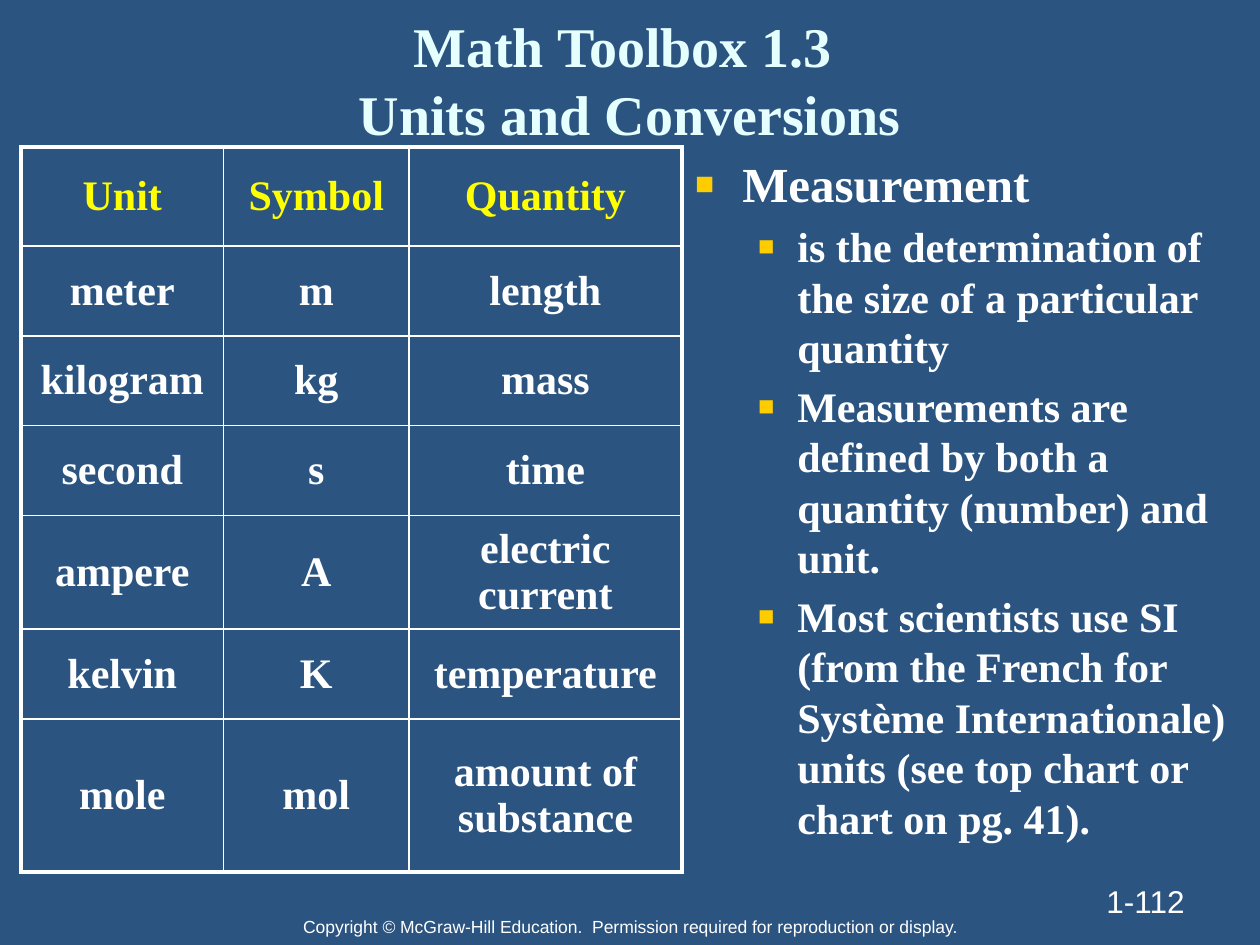
from lxml import etree
from pptx import Presentation
from pptx.dml.color import RGBColor
from pptx.enum import text as txt
from pptx.oxml import ns
from pptx.util import Cm, Pt

NAVY = RGBColor(0x2B, 0x54, 0x81)
WHITE = RGBColor(0xFF, 0xFF, 0xFF)
YELLOW = RGBColor(0xFF, 0xFF, 0x00)
ICE = RGBColor(0xE5, 0xFF, 0xFF)
GOLD = RGBColor(0xFF, 0xCC, 0x00)
SERIF, SANS = "Times New Roman", "Arial"
CENTER, RIGHT = txt.PP_ALIGN.CENTER, txt.PP_ALIGN.RIGHT
MIDDLE, TOP, BOTTOM = (txt.MSO_ANCHOR.MIDDLE, txt.MSO_ANCHOR.TOP,
                       txt.MSO_ANCHOR.BOTTOM)

UNITS = [
    ("Unit", "Symbol", "Quantity"),
    ("meter", "m", "length"),
    ("kilogram", "kg", "mass"),
    ("second", "s", "time"),
    ("ampere", "A", "electric current"),
    ("kelvin", "K", "temperature"),
    ("mole", "mol", "amount of substance"),
]
COLUMN_WIDTHS = (4.09, 3.73, 5.51)
ROW_HEIGHTS = (2, 1.81, 1.81, 1.81, 2.29, 1.81, 3.09)

MEASUREMENT = [
    (0, "Measurement"),
    (1, "is the determination of the size of a particular quantity"),
    (1, "Measurements are defined by both a quantity (number) and unit."),
    (1, "Most scientists use SI (from the French for Système Internationale) "
        "units (see top chart or chart on pg. 41)."),
]
# level: (text size, left margin, first-line indent)
LEVELS = {0: (28, 0.95, -0.95), 1: (24, 2.06, -0.79)}


def apply(target, **values):
    for name, value in values.items():
        setattr(target, name, value)


def place(shape, box):
    left, top, width, height = (Cm(length) for length in box)
    apply(shape, left=left, top=top, width=width, height=height)


def write(paragraph, words, size, color, name=SERIF, bold=True):
    paragraph.text = words
    for run in paragraph.runs:
        apply(run.font, size=Pt(size), name=name, bold=bold)
        run.font.color.rgb = color


def add_child(parent, tag, **attributes):
    return etree.SubElement(parent, ns.qn(tag), attributes)


def add_square_bullet(paragraph, left, indent):
    properties = paragraph._p.get_or_add_pPr()
    properties.set("marL", str(Cm(left)))
    properties.set("indent", str(Cm(indent)))
    add_child(add_child(properties, "a:buClr"), "a:srgbClr", val=str(GOLD))
    add_child(properties, "a:buSzPct", val="65000")
    add_child(properties, "a:buFont", typeface=SANS)
    add_child(properties, "a:buChar", char="■")


def add_border(cell, side, width):
    line = add_child(cell._tc.get_or_add_tcPr(), f"a:{side}",
                     w=str(Pt(width)))
    add_child(add_child(line, "a:solidFill"), "a:srgbClr", val=str(WHITE))


def fill_title(title, box):
    place(title, box)
    frame = title.text_frame
    apply(frame, vertical_anchor=MIDDLE, word_wrap=True,
          auto_size=txt.MSO_AUTO_SIZE.NONE, margin_bottom=Cm(1.4))
    heading = frame.paragraphs[0]
    write(heading, "Math Toolbox 1.3 \vUnits and Conversions", 32, ICE)
    heading.alignment = CENTER


def fill_measurement(body, box):
    place(body, box)
    frame = body.text_frame
    apply(frame, vertical_anchor=TOP, word_wrap=True,
          auto_size=txt.MSO_AUTO_SIZE.NONE)
    for index, (level, words) in enumerate(MEASUREMENT):
        size, left, indent = LEVELS[level]
        point = frame.add_paragraph() if index else frame.paragraphs[0]
        add_square_bullet(point, left, indent)
        write(point, words, size, WHITE)
        apply(point, level=level,
              space_before=Pt(0.2 * size if index else 0))


def add_units_table(slide, box):
    rows, columns = len(UNITS), len(COLUMN_WIDTHS)
    table = slide.shapes.add_table(
        rows, columns, *(Cm(length) for length in box)).table
    apply(table, first_row=False, horz_banding=False)
    for column, width in zip(table.columns, COLUMN_WIDTHS):
        column.width = Cm(width)
    for r, (row, height) in enumerate(zip(table.rows, ROW_HEIGHTS)):
        row.height = Cm(height)
        for c, cell in enumerate(row.cells):
            outer_sides = {"lnL": c == 0, "lnR": c == columns - 1,
                           "lnT": r == 0, "lnB": r == rows - 1}
            for side, outer in outer_sides.items():
                add_border(cell, side, 2.25 if outer else 1)
            cell.fill.background()
            cell.vertical_anchor = MIDDLE
            entry = cell.text_frame.paragraphs[0]
            write(entry, UNITS[r][c], 24, WHITE if r else YELLOW)
            entry.alignment = CENTER


def add_note(slide, box, words, size, alignment, anchor):
    """Add one line of plain text at the foot of the slide."""
    frame = slide.shapes.add_textbox(
        *(Cm(length) for length in box)).text_frame
    apply(frame, word_wrap=True, vertical_anchor=anchor)
    note = frame.paragraphs[0]
    write(note, words, size, WHITE, SANS, False)
    note.alignment = alignment


def main():
    deck = Presentation()
    apply(deck, slide_width=Cm(25.4), slide_height=Cm(19.05))
    slide = deck.slides.add_slide(deck.slide_layouts[1])
    background = slide.background.fill
    background.solid()
    background.fore_color.rgb = NAVY

    fill_title(slide.shapes.title, (1.27, 0.64, 22.86, 3.18))
    fill_measurement(slide.placeholders[1], (13.76, 2.97, 11.23, 14.81))
    add_units_table(slide, (0.42, 2.96, 13.33, 14.62))
    add_note(slide, (0, 18.35, 25.4, 0.71),
             "Copyright © McGraw-Hill Education.  Permission required for "
             "reproduction or display.", 10, CENTER, TOP)
    add_note(slide, (18.21, 17.35, 5.92, 1.32), "1-112", 18, RIGHT, BOTTOM)
    deck.save("out.pptx")


if __name__ == "__main__":
    main()
